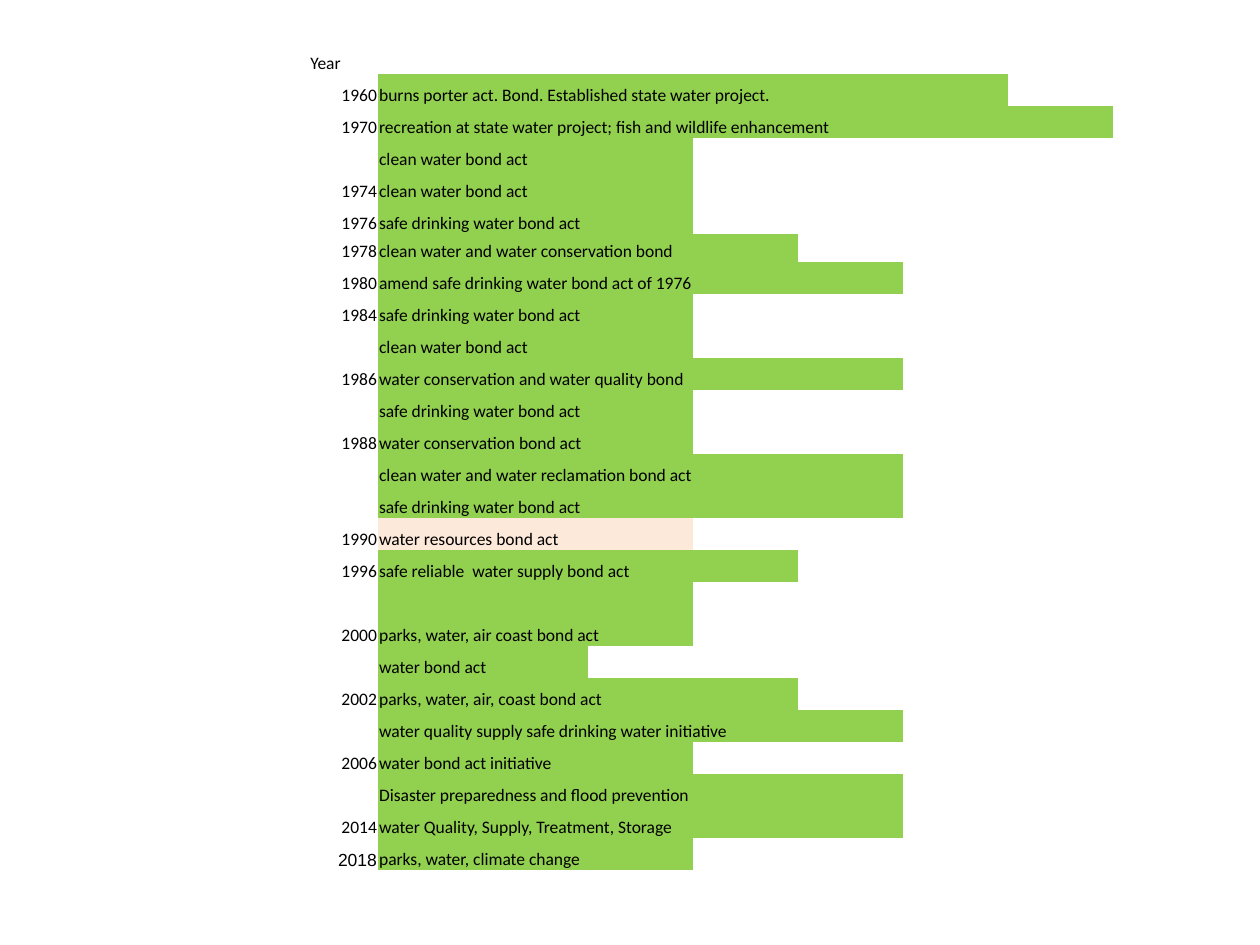
from dataclasses import dataclass

from lxml import etree
from pptx import Presentation
from pptx.dml.color import RGBColor
from pptx.enum.text import MSO_ANCHOR, PP_ALIGN
from pptx.oxml.ns import qn
from pptx.util import Pt

LEFT, MID, RIGHT = PP_ALIGN.LEFT, PP_ALIGN.CENTER, PP_ALIGN.RIGHT
BOTTOM = MSO_ANCHOR.BOTTOM
NO_GRID = "{2D5ABB26-0587-4C30-8999-92F81FD0307C}"


@dataclass(frozen=True)
class Theme:
    ink: RGBColor = RGBColor(0, 0, 0)
    green: RGBColor = RGBColor(0x92, 0xD0, 0x50)
    peach: RGBColor = RGBColor(0xFD, 0xE9, 0xD9)
    font: str = "Calibri"
    alt: str = "Arial"
    size: int = 10


THEME = Theme()
COLS, COL_W = 8, 60
ROW_H = 18.3
HEIGHTS = {"1978": 16, "2000": 2 * ROW_H}
FAILED = {"1990"}
YEAR_FONTS = {"2018": THEME.alt}

# Year, act, columns merged, columns filled
ACTS = [
    ("1960", "burns porter act. Bond. Established state water project.", 6, 6),
    ("1970", "recreation at state water project; fish and wildlife enhancement", 7, 7),
    ("", "clean water bond act", 3, 3),
    ("1974", "clean water bond act", 3, 3),
    ("1976", "safe drinking water bond act", 3, 3),
    ("1978", "clean water and water conservation bond", 4, 4),
    ("1980", "amend safe drinking water bond act of 1976", 5, 5),
    ("1984", "safe drinking water bond act", 3, 3),
    ("", "clean water bond act", 3, 3),
    ("1986", "water conservation and water quality bond", 5, 5),
    ("", "safe drinking water bond act", 3, 3),
    ("1988", "water conservation bond act", 3, 3),
    ("", "clean water and water reclamation bond act", 5, 5),
    ("", "safe drinking water bond act", 3, 5),
    ("1990", "water resources bond act", 3, 3),
    ("1996", "safe reliable  water supply bond act", 4, 4),
    ("2000", "parks, water, air coast bond act", 3, 3),
    ("", "water bond act", 2, 2),
    ("2002", "parks, water, air, coast bond act", 4, 4),
    ("", "water quality supply safe drinking water initiative", 5, 5),
    ("2006", "water bond act initiative", 3, 3),
    ("", "Disaster preparedness and flood prevention", 5, 5),
    ("2014", "water Quality, Supply, Treatment, Storage", 5, 5),
    ("2018", "parks, water, climate change", 3, 3),
]


def write(cell, text, align=LEFT, font=THEME.font, size=THEME.size, color=THEME.ink):
    para = cell.text_frame.paragraphs[0]
    para.alignment = align
    run = para.add_run()
    run.text = text
    run.font.name = font
    run.font.size = Pt(size)
    run.font.color.rgb = color


def clear(cell):
    """Give a cell tight margins, no fill and a small line height."""
    cell.margin_left = cell.margin_right = cell.margin_top = Pt(0.7)
    cell.margin_bottom = 0
    cell.vertical_anchor = BOTTOM
    cell.fill.background()
    para = cell.text_frame.paragraphs[0]
    etree.SubElement(para._p, qn("a:endParaRPr"), sz=str(THEME.size * 100))


def add_act(table, row, act):
    year, name, span, width = act
    table.rows[row].height = Pt(HEIGHTS.get(year, ROW_H))
    if year:
        write(table.cell(row, 0), year, align=RIGHT,
              font=YEAR_FONTS.get(year, THEME.font))
    for col in range(1, width + 1):
        fill = table.cell(row, col).fill
        fill.solid()
        fill.fore_color.rgb = THEME.peach if year in FAILED else THEME.green
    first = table.cell(row, 1)
    first.merge(table.cell(row, span))
    write(first, name)


def add_acts(slide, left, top):
    count = len(ACTS) + 1
    frame = slide.shapes.add_table(count, COLS, Pt(left), Pt(top),
                                   Pt(COLS * COL_W), Pt(count * ROW_H))
    table = frame.table
    table.first_row = table.horz_banding = False
    table._tbl.tblPr.find(qn("a:tableStyleId")).text = NO_GRID
    for col in table.columns:
        col.width = Pt(COL_W)
    for cell in table.iter_cells():
        clear(cell)
    table.rows[0].height = Pt(ROW_H)
    write(table.cell(0, 0), "Year", align=MID)
    for row, act in enumerate(ACTS, 1):
        add_act(table, row, act)


def main():
    deck = Presentation()
    deck.slide_width, deck.slide_height = Pt(720), Pt(540)
    slide = deck.slides.add_slide(deck.slide_layouts.get_by_name("Blank"))
    add_acts(slide, 156, 24)
    deck.save("out.pptx")


if __name__ == "__main__":
    main()
